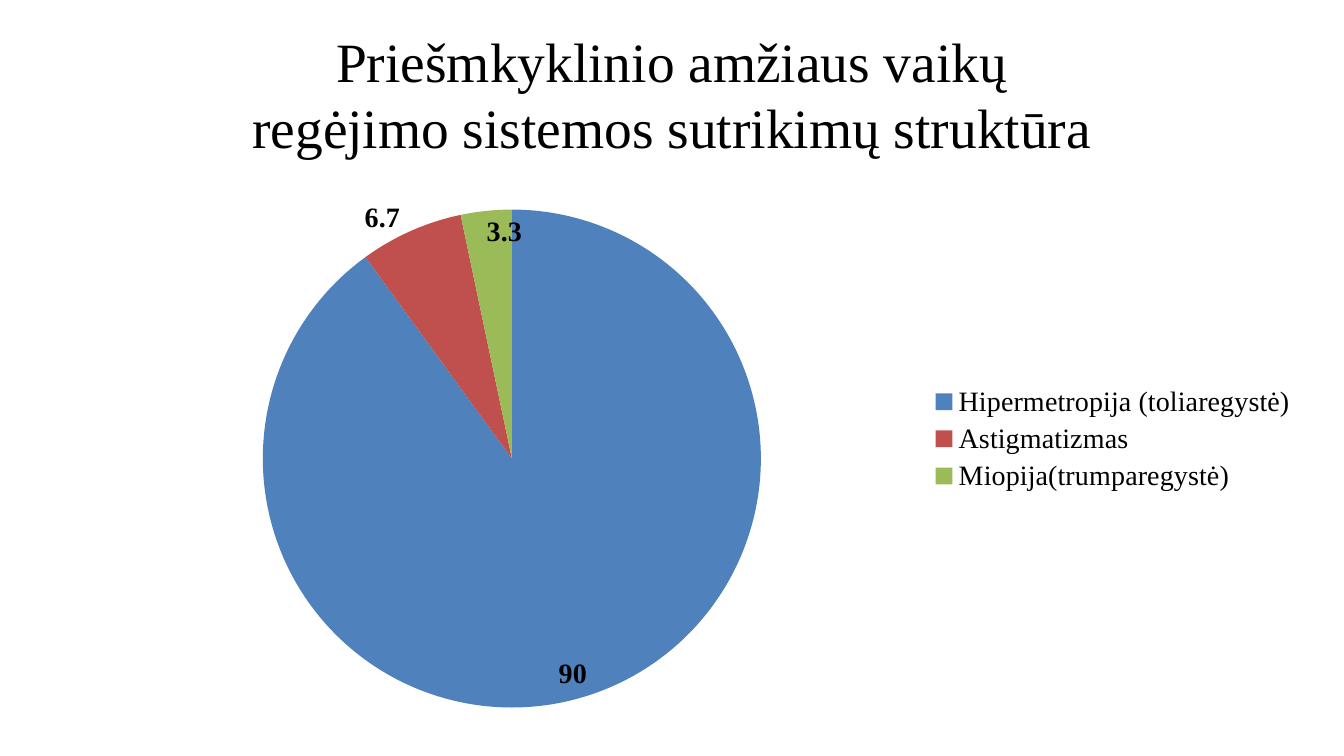
from dataclasses import dataclass

from lxml import etree
from pptx import Presentation, util as u
from pptx.chart.data import CategoryChartData
from pptx.dml.color import RGBColor
from pptx.enum import chart as ch, text
from pptx.oxml.ns import qn


@dataclass(frozen=True)
class Theme:
    face: str = "Times New Roman"
    base: str = "Calibri"
    ink: str = "000000"
    fills: tuple = ("4F81BD", "C0504D", "9BBB59")
    head: float = 39.6
    body: float = 18
    label: float = 20


THEME = Theme()
WIDE, HIGH = u.Inches(13.33), u.Inches(7.5)
TITLE = "Priešmkyklinio amžiaus vaikų\vregėjimo sistemos sutrikimų struktūra"
DATA = {
    "Hipermetropija (toliaregystė)": 90,
    "Astigmatizmas": 6.7,
    "Miopija(trumparegystė)": 3.3,
}


def share(x, y, w, h):
    """Turn shares of the slide into left, top, width and height."""
    return [round(v) for v in (x * WIDE, y * HIGH, w * WIDE, h * HIGH)]


def style(font, size, face=THEME.face, bold=False):
    font.name, font.size, font.bold = face, u.Pt(size), bold
    font.color.rgb = RGBColor.from_string(THEME.ink)


def layout(**marks):
    """Make a manual chart layout from its named values."""
    root = etree.Element(qn("c:layout"))
    man = etree.SubElement(root, qn("c:manualLayout"))
    for name, val in marks.items():
        etree.SubElement(man, qn("c:" + name)).set("val", str(val))
    return root


def add_title(slide, words, box):
    title = slide.shapes.title
    title.left, title.top, title.width, title.height = box
    frame = title.text_frame
    frame.text = words
    frame.word_wrap = True
    frame.auto_size = text.MSO_AUTO_SIZE.NONE
    frame.vertical_anchor = text.MSO_ANCHOR.MIDDLE
    para = frame.paragraphs[0]
    para.alignment = text.PP_ALIGN.CENTER
    for run in para.runs:
        style(run.font, THEME.head)


def add_pie(slide, parts, box):
    data = CategoryChartData()
    data.categories = list(parts)
    data.add_series("Series 1", list(parts.values()))
    frame = slide.shapes.add_chart(ch.XL_CHART_TYPE.PIE, *box, data)
    chart = frame.chart
    chart.has_title = False
    style(chart.font, THEME.body, THEME.base)

    chart.has_legend = True
    chart.legend.position = ch.XL_LEGEND_POSITION.RIGHT
    chart.legend.include_in_layout = False
    style(chart.legend.font, THEME.label)

    plot = chart.plots[0]
    plot.vary_by_categories = True
    pie = plot.series[0]
    for i, color in enumerate(THEME.fills):
        fill = pie.points[i].format.fill
        fill.solid()
        fill.fore_color.rgb = RGBColor.from_string(color)

    labels = pie.data_labels
    labels.show_value = True
    labels.position = ch.XL_LABEL_POSITION.INSIDE_END
    style(labels.font, THEME.label, bold=True)
    move_label(pie, 1, -0.04, -0.06)

    area = chart._chartSpace.chart.plotArea
    for old in area.findall(qn("c:layout")):
        area.remove(old)
    area.insert(0, layout(layoutTarget="inner", xMode="edge", yMode="edge",
                          x=0.14, y=0.09, w=0.41, h=0.89))


def move_label(pie, i, dx, dy):
    """Shift one slice's label by shares of the chart's size."""
    label = pie.points[i].data_label
    label.position = ch.XL_LABEL_POSITION.INSIDE_END
    style(label.font, THEME.label, bold=True)
    for idx in pie.data_labels._element.iter(qn("c:idx")):
        if idx.get("val") == str(i):
            idx.addnext(layout(x=dx, y=dy))


def main():
    deck = Presentation()
    deck.slide_width, deck.slide_height = WIDE, HIGH
    slide = deck.slides.add_slide(deck.slide_layouts[5])
    add_title(slide, TITLE, share(0.05, 0.04, 0.9, 0.167))
    add_pie(slide, DATA, share(0.069, 0.207, 0.904, 0.747))
    deck.save("out.pptx")


if __name__ == "__main__":
    main()
